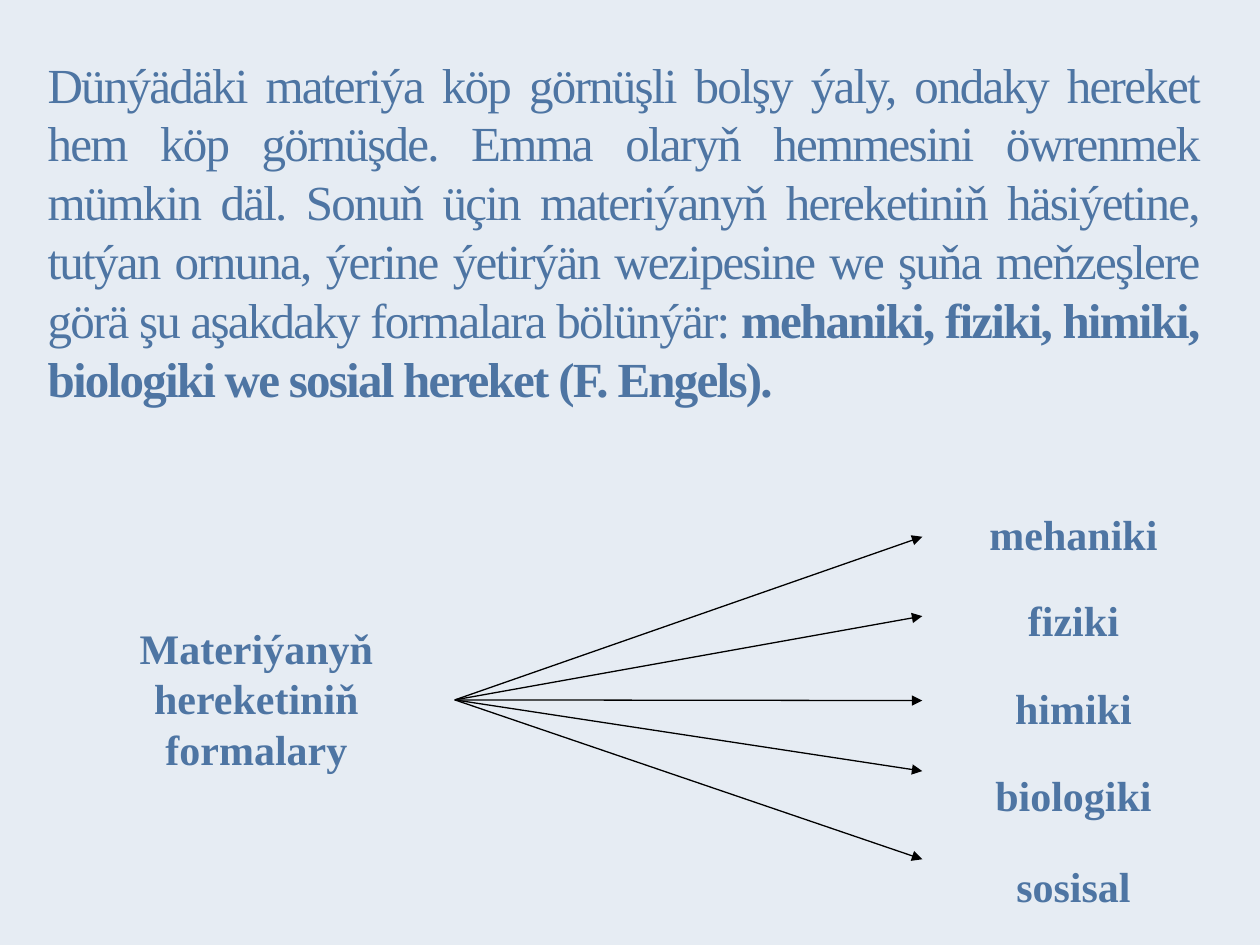
from lxml import etree
from pptx import Presentation
from pptx.dml.color import RGBColor
from pptx.enum import shapes, text
from pptx.oxml.ns import qn
from pptx.util import Inches, Pt

BACKGROUND, BLUE, BLACK = "E6ECF3", "4E75A3", "000000"

INTRO = (
    "Dünýädäki materiýa köp görnüşli bolşy ýaly, ondaky hereket hem köp "
    "görnüşde. Emma olaryň hemmesini öwrenmek mümkin däl. Sonuň üçin "
    "materiýanyň hereketiniň häsiýetine, tutýan ornuna, ýerine ýetirýän "
    "wezipesine we şuňa meňzeşlere görä şu aşakdaky formalara bölünýär:"
)
INTRO_FORMS = " mehaniki, fiziki, himiki, biologiki we sosial hereket (F. Engels). "

# Form of motion, top of its label, height at which its arrow ends
FORMS = [
    ("mehaniki", 3.99, 4.26),
    ("fiziki", 4.67, 4.89),
    ("himiki", 5.37, 5.56),
    ("biologiki", 6.06, 6.12),
    ("sosisal", 6.78, 6.82),
]


def color(hex_value):
    return RGBColor.from_string(hex_value)


def add_run(paragraph, words, size, bold, spacing=None):
    run = paragraph.add_run()
    run.text = words
    for name, value in {"name": "Times New Roman", "size": Pt(size), "bold": bold}.items():
        setattr(run.font, name, value)
    run.font.color.rgb = color(BLUE)
    if spacing is not None:
        run.font._element.set("spc", str(spacing * 100))


def add_box(slide, left, top, width, height, anchor=text.MSO_ANCHOR.TOP):
    box = slide.shapes.add_textbox(*map(Inches, (left, top, width, height)))
    box.text_frame.word_wrap = True
    box.text_frame.vertical_anchor = anchor
    return box


def add_intro(slide):
    box = add_box(slide, 0.28, 0.17, 9.33, 3.11, text.MSO_ANCHOR.BOTTOM)
    paragraph = box.text_frame.paragraphs[0]
    paragraph.alignment = text.PP_ALIGN.JUSTIFY
    add_run(paragraph, INTRO, 28, False, spacing=-1)
    add_run(paragraph, INTRO_FORMS, 28, True, spacing=-1)


def add_label(slide, lines, left, top, width, height):
    label = add_box(slide, left, top, width, height)
    frame = label.text_frame
    for index, line in enumerate(lines):
        paragraph = frame.add_paragraph() if index else frame.paragraphs[0]
        paragraph.alignment = text.PP_ALIGN.CENTER
        add_run(paragraph, line, 24, True)
    return label


def add_arrow(slide, source, end_x, end_y):
    start = source.left + source.width, source.top + source.height // 2
    arrow = slide.shapes.add_connector(
        shapes.MSO_CONNECTOR.STRAIGHT, *start, Inches(end_x), Inches(end_y))
    arrow.begin_connect(source, 3)
    arrow.line.color.rgb = color(BLACK)
    arrow.line.width = Pt(0.75)
    etree.SubElement(arrow.line._get_or_add_ln(), qn("a:tailEnd"), type="triangle")
    etree.SubElement(arrow._element.spPr, qn("a:effectLst"))


def main():
    prs = Presentation()
    prs.slide_width, prs.slide_height = Inches(10), Inches(7.5)
    slide = prs.slides.add_slide(prs.slide_layouts[6])
    slide.background.fill.solid()
    slide.background.fill.fore_color.rgb = color(BACKGROUND)

    # Introductory paragraph
    add_intro(slide)

    # Diagram: one concept fanning out to its forms
    concept = add_label(slide, ["Materiýanyň", "hereketiniň", "formalary"],
                        0.46, 4.89, 3.15, 1.33)
    for form, label_top, arrow_end in FORMS:
        add_label(slide, [form], 7.24, label_top, 2.56, 0.55)
        add_arrow(slide, concept, 7.32, arrow_end)

    prs.save("out.pptx")


if __name__ == "__main__":
    main()
